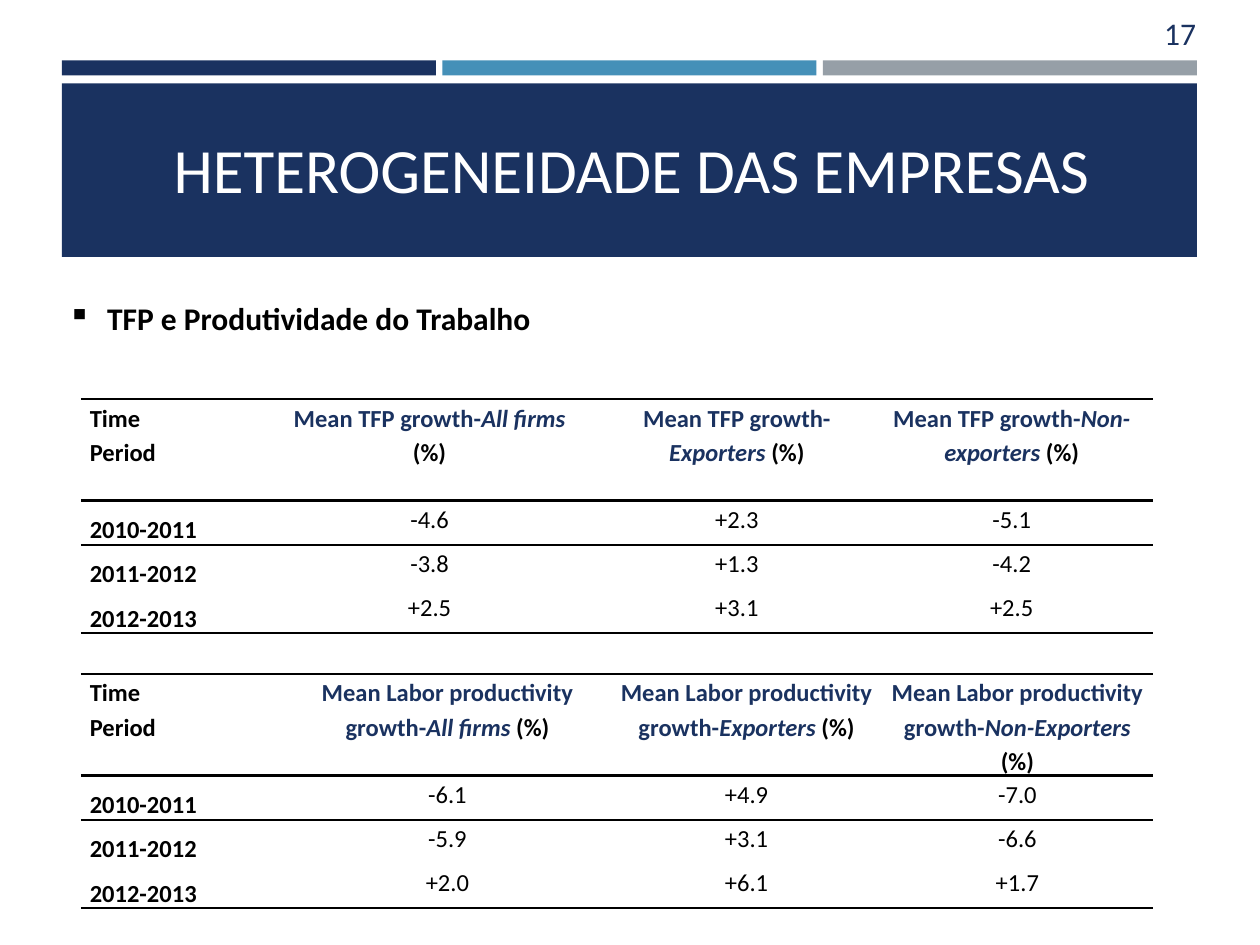
from lxml import etree
from pptx import Presentation
from pptx.dml.color import RGBColor
from pptx.enum.shapes import MSO_SHAPE as Shape
from pptx.enum.text import MSO_ANCHOR as Anchor, PP_ALIGN as Align
from pptx.oxml import parse_xml
from pptx.oxml.ns import nsdecls, qn
from pptx.util import Cm, Pt

NAVY = RGBColor(0x1A, 0x32, 0x60)
BLUE = RGBColor(0x45, 0x90, 0xB8)
GREY = RGBColor(0x96, 0x9F, 0xA7)
BLACK = RGBColor(0, 0, 0)
WHITE = RGBColor(255, 255, 255)
NO_STYLE = "{2D5ABB26-0587-4C30-8999-92F81FD0307C}"


def set_font(paragraph, size, color, bold=False):
    font = paragraph.font
    font.name, font.size, font.bold = "Calibri", Pt(size), bold
    font.color.rgb = color


def add_rule(cell, side):
    cell._tc.get_or_add_tcPr().insert(0, parse_xml(
        f'<a:{side} {nsdecls("a")} w="{Pt(1.5)}"><a:solidFill>'
        f'<a:srgbClr val="{BLACK}"/></a:solidFill></a:{side}>'))


prs = Presentation()
prs.slide_width, prs.slide_height = Cm(25.4), Cm(19.05)
slide = prs.slides.add_slide(prs.slide_layouts[5])
shapes = slide.shapes

# Three header strips and the title band
bands = [(1.25 + 7.67 * i, 1.22, 7.54, 0.3, color)
         for i, color in enumerate((NAVY, BLUE, GREY))]
bands.append((1.25, 1.68, 22.88, 3.5, NAVY))
for left, top, width, height, color in bands:
    band = shapes.add_shape(Shape.RECTANGLE, Cm(left), Cm(top), Cm(width), Cm(height))
    band.shadow.inherit = False
    band.fill.solid()
    band.fill.fore_color.rgb = color
    band.line.fill.background()

# Title, placed in front of its band
title = shapes.title
band._element.addnext(title._element)
title.left, title.top, title.width, title.height = Cm(1.63), Cm(1.9), Cm(22.2), Cm(3)
title.text_frame.text = "HETEROGENEIDADE DAS EMPRESAS"
title.text_frame.vertical_anchor = Anchor.MIDDLE
title.text_frame.paragraphs[0].alignment = Align.CENTER
set_font(title.text_frame.paragraphs[0], 36, WHITE)

# Slide number
number = shapes.add_textbox(Cm(23.22), Cm(0.15), Cm(1.32), Cm(1.02)).text_frame
number.word_wrap = True
number.text = "17"
set_font(number.paragraphs[0], 18, NAVY)

# Bulleted heading
heading = shapes.add_textbox(Cm(1.12), Cm(5.9), Cm(23), Cm(1.02)).text_frame
heading.word_wrap = True
heading.text = "TFP e Produtividade do Trabalho"
set_font(heading.paragraphs[0], 18, BLACK, bold=True)
bullet_props = heading.paragraphs[0]._p.get_or_add_pPr()
bullet_props.set("marL", str(Cm(0.79)))
bullet_props.set("indent", str(-Cm(0.79)))
bullet = etree.Element(qn("a:buChar"), char="▪")
bullet_props.insert(0, bullet)

# Growth tables: top, column widths, measure, firm groups, text before "(%)", values
PERIODS = ["2010-2011", "2011-2012", "2012-2013"]
growth_tables = [
    (8.05, [3.53, 7, 5.39, 5.69], "Mean TFP growth-",
     ["All firms\n", "Exporters ", "Non-exporters "],
     [["-4.6", "+2.3", "-5.1"], ["-3.8", "+1.3", "-4.2"], ["+2.5", "+3.1", "+2.5"]]),
    (13.59, [4.09, 6.6, 5.46, 5.46], "Mean Labor productivity growth-",
     ["All firms ", "Exporters ", "Non-Exporters "],
     [["-6.1", "+4.9", "-7.0"], ["-5.9", "+3.1", "-6.6"], ["+2.0", "+6.1", "+1.7"]]),
]
HEIGHTS = [2.04, 0.89, 0.89, 0.89]

for top, widths, measure, groups, values in growth_tables:
    frame = shapes.add_table(4, 4, Cm(1.63), Cm(top), Cm(sum(widths)), Cm(sum(HEIGHTS)))
    table = frame.table
    table.first_row = table.horz_banding = False
    table._tbl.tblPr.find(qn("a:tableStyleId")).text = NO_STYLE
    for column, width in zip(table.columns, widths):
        column.width = Cm(width)
    for row, height in zip(table.rows, HEIGHTS):
        row.height = Cm(height)

    # Period column and growth values
    table.cell(0, 0).text = "Time\nPeriod"
    for r, (period, growths) in enumerate(zip(PERIODS, values), 1):
        for c, text in enumerate([period] + growths):
            table.cell(r, c).text = text

    # Column headings: navy measure, italic group, black unit
    for c, group in enumerate(groups, 1):
        frame_text = table.cell(0, c).text_frame
        paragraph = frame_text.paragraphs[0]
        for text, color, italic in ((measure, NAVY, False), (group, NAVY, True),
                                    ("(%)", BLACK, False)):
            run = paragraph.add_run()
            run.text = text.rstrip("\n")
            run.font.color.rgb, run.font.italic = color, italic
            if text.endswith("\n"):
                paragraph = frame_text.add_paragraph()

    # Common cell format and horizontal rules
    for r in range(4):
        for c in range(4):
            cell = table.cell(r, c)
            cell.fill.background()
            cell.margin_left = cell.margin_right = Cm(0.18)
            cell.margin_top = cell.margin_bottom = 0
            for paragraph in cell.text_frame.paragraphs:
                set_font(paragraph, 14, BLACK, bold=r == 0 or c == 0)
                paragraph.alignment = Align.CENTER if c else Align.LEFT
                paragraph.line_spacing = 1.5 if r and not c else 1.15
            if r in (0, 3):
                add_rule(cell, "lnB")
            if r in (0, 1):
                add_rule(cell, "lnT")

prs.save("out.pptx")
